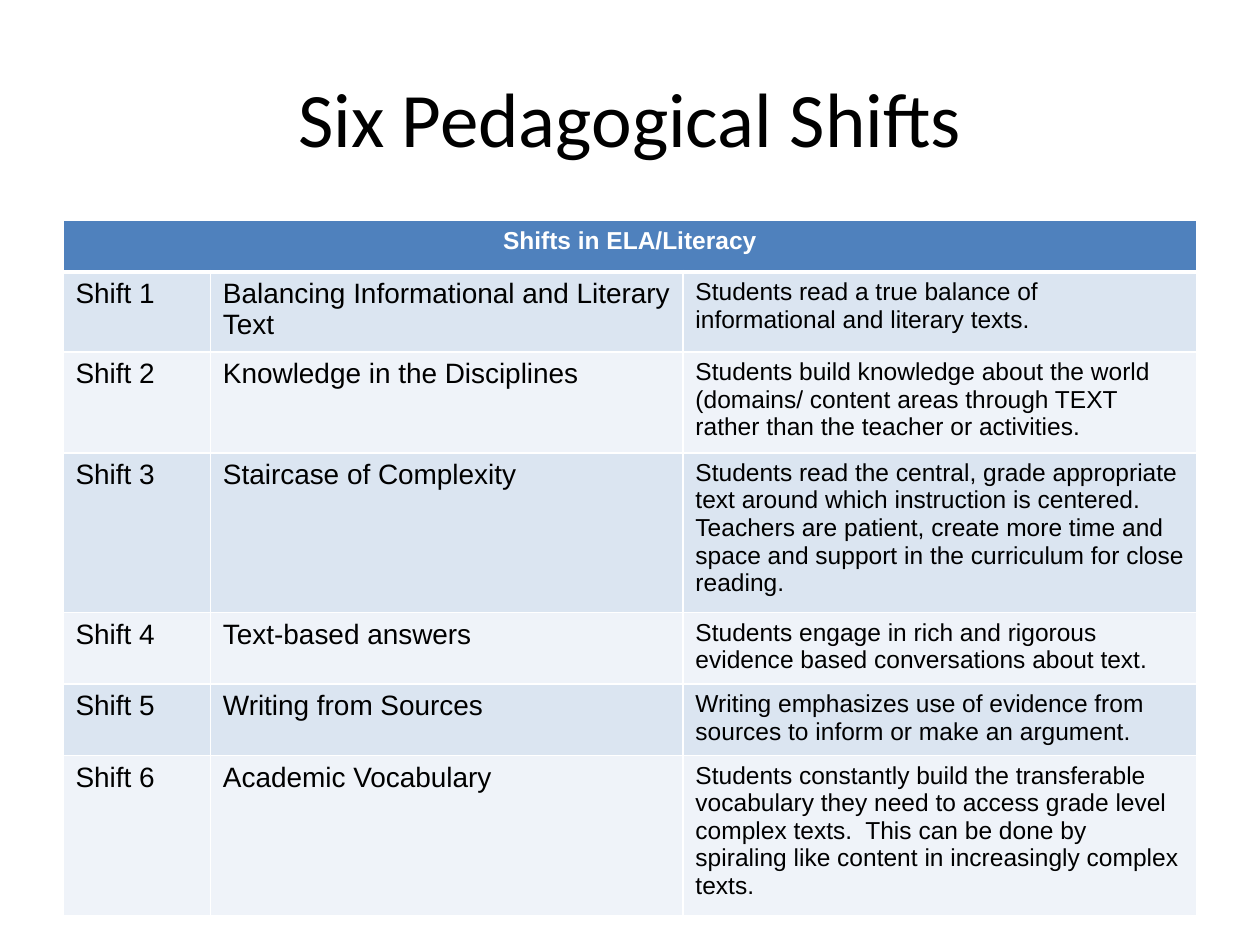
from dataclasses import dataclass

from lxml import etree
from pptx import Presentation
from pptx import util as u
from pptx.dml import color
from pptx.enum import text
from pptx.oxml import ns


@dataclass(frozen=True)
class Theme:
    ink: str = "000000"
    paper: str = "FFFFFF"
    header: str = "4F81BD"
    bands: tuple = ("DBE5F1", "EFF3F9")
    title_font: str = "Calibri"
    body_font: str = "Arial"
    title_size: int = 44
    label_size: int = 16
    detail_size: int = 14
    rule: int = 1
    header_rule: int = 3


THEME = Theme()
TITLE = "Six Pedagogical Shifts"
HEADING = "Shifts in ELA/Literacy"
SHIFTS = [
    ("Balancing Informational and Literary Text",
     "Students read a true balance of informational and literary texts."),
    ("Knowledge in the Disciplines",
     "Students build knowledge about the world (domains/ content areas through TEXT "
     "rather than the teacher or activities."),
    ("Staircase of Complexity",
     "Students read the central, grade appropriate text around which instruction is centered.  "
     "Teachers are patient, create more time and space and support in the curriculum "
     "for close reading."),
    ("Text-based answers",
     "Students engage in rich and rigorous evidence based conversations about text."),
    ("Writing from Sources",
     "Writing emphasizes use of evidence from sources to inform or make an argument."),
    ("Academic Vocabulary",
     "Students constantly build the transferable vocabulary they need to access grade level "
     "complex texts.  This can be done by spiraling like content in increasingly complex texts."),
]
COLUMN_WIDTHS = (1.17, 3.75, 4.08)
ROW_HEIGHT = 0.41


def write(frame, words, font, size, ink, bold=False, align=text.PP_ALIGN.LEFT):
    frame.text = words
    paragraph = frame.paragraphs[0]
    paragraph.alignment = align
    for run in paragraph.runs:
        run.font.name = font
        run.font.size = u.Pt(size)
        run.font.bold = bold
        run.font.color.rgb = color.RGBColor.from_string(ink)


def add_title(slide, left, top, width, height):
    title = slide.shapes.add_textbox(left, top, width, height)
    frame = title.text_frame
    frame.word_wrap = True
    frame.vertical_anchor = text.MSO_ANCHOR.MIDDLE
    write(frame, TITLE, THEME.title_font, THEME.title_size, THEME.ink,
          align=text.PP_ALIGN.CENTER)


def style_cell(cell, fill, top_rule=THEME.rule, bottom_rule=THEME.rule):
    properties = cell._tc.get_or_add_tcPr()
    rules = {"L": THEME.rule, "R": THEME.rule, "T": top_rule, "B": bottom_rule}
    for side, weight in rules.items():
        line = etree.SubElement(properties, ns.qn(f"a:ln{side}"), w=str(u.Pt(weight)))
        paint = etree.SubElement(line, ns.qn("a:solidFill"))
        etree.SubElement(paint, ns.qn("a:srgbClr"), val=THEME.paper)
    cell.fill.solid()
    cell.fill.fore_color.rgb = color.RGBColor.from_string(fill)


def add_shift_table(slide, left, top, width):
    row_count = len(SHIFTS) + 1
    table = slide.shapes.add_table(row_count, len(COLUMN_WIDTHS), left, top, width,
                                   u.Inches(ROW_HEIGHT * row_count)).table
    for column, share in zip(table.columns, COLUMN_WIDTHS):
        column.width = int(width * share / sum(COLUMN_WIDTHS))
    for row in table.rows:
        row.height = u.Inches(ROW_HEIGHT)

    for cell in table.rows[0].cells:
        style_cell(cell, THEME.header, bottom_rule=THEME.header_rule)
    heading = table.cell(0, 0)
    heading.merge(table.cell(0, len(COLUMN_WIDTHS) - 1))
    write(heading.text_frame, HEADING, THEME.body_font, THEME.detail_size, THEME.paper,
          bold=True, align=text.PP_ALIGN.CENTER)

    sizes = (THEME.label_size, THEME.label_size, THEME.detail_size)
    for number, (name, detail) in enumerate(SHIFTS, start=1):
        band = THEME.bands[(number - 1) % len(THEME.bands)]
        top_rule = THEME.header_rule if number == 1 else THEME.rule
        entries = (f"Shift {number}", name, detail)
        for cell, words, size in zip(table.rows[number].cells, entries, sizes):
            style_cell(cell, band, top_rule=top_rule)
            write(cell.text_frame, words, THEME.body_font, size, THEME.ink)


def main():
    deck = Presentation()
    deck.slide_width, deck.slide_height = u.Inches(10), u.Inches(7.5)
    slide = deck.slides.add_slide(deck.slide_layouts[6])
    margin, content_width = u.Inches(0.5), u.Inches(9)
    add_title(slide, margin, u.Inches(0.3), content_width, u.Inches(1.25))
    add_shift_table(slide, margin, u.Inches(1.75), content_width)
    deck.save("out.pptx")


if __name__ == "__main__":
    main()
